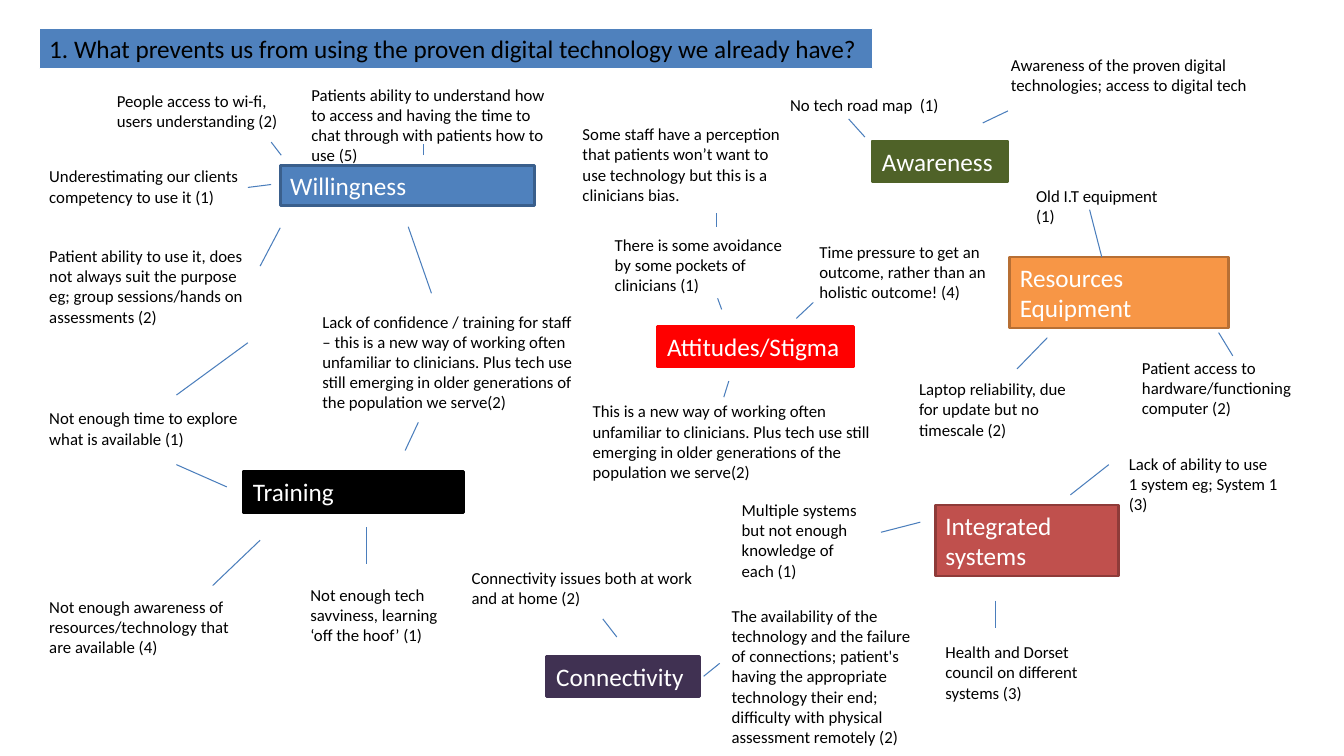
from lxml import etree
from pptx import Presentation
from pptx.dml.color import RGBColor
from pptx.enum.shapes import MSO_CONNECTOR, MSO_SHAPE
from pptx.enum.text import MSO_ANCHOR, MSO_AUTO_SIZE, PP_ALIGN
from pptx.oxml.ns import qn
from pptx.util import Pt

RECTANGLE = MSO_SHAPE.RECTANGLE
STRAIGHT = MSO_CONNECTOR.STRAIGHT
TOP = MSO_ANCHOR.TOP
LEFT = PP_ALIGN.LEFT
NO_AUTOFIT = MSO_AUTO_SIZE.NONE

THEME = {
    "font": "Calibri", "heading_size": 18, "note_size": 12,
    "dark": "000000", "light": "FFFFFF",
    "question": ("4F81BD", "FFFFFF"),
    "link": "4B7EBC", "link_width": 0.75,
    "question_border": 0.75, "topic_border": 2,
    # Fill and border of each topic
    "Willingness": ("4F81BD", "3A5F8C"),
    "Training": ("000000", "000000"),
    "Attitudes/Stigma": ("FF0000", "FF0000"),
    "Awareness": ("4F6228", "4F6228"),
    "Resources Equipment": ("F79646", "B76F34"),
    "Integrated  systems": ("C0504D", "8E3B39"),
    "Connectivity": ("403152", "403152"),
}

# Content: all places are in points
QUESTION = ("1. What prevents us from using the proven digital technology we already have?",
            (28.1, 20.2, 595.4))

# Topic: name, (left, top, width), lines of text
# Notes: text, (left, top, width), lines of room
# Links: start x, start y, end x, end y
TOPICS = [
    {"topic": ("Willingness", (200.2, 118.1, 181.4), 1),
     "notes": [
         ("People access to wi-fi, users understanding (2)", (76.3, 61.2, 135.4), 2),
         ("Patients ability to understand how to access and having the time to chat "
          "through with patients how to use (5)", (215.3, 56.9, 185.8), 4),
         ("Underestimating our clients competency to use it (1)", (28.1, 115.2, 202.3), 2),
         ("Patient ability to use it, does not always suit the purpose eg; group "
          "sessions/hands on assessments (2)", (28.1, 172.1, 157.7), 4),
         ("Lack of confidence / training for staff – this is a new way of working often "
          "unfamiliar to clinicians. Plus tech use still emerging in older generations "
          "of the population we serve(2)", (223.2, 218.9, 198), 5)],
     "links": [(200.9, 110.9, 193.7, 101.5), (302.4, 110.9, 302.4, 103),
               (177.1, 133.9, 193.7, 131.8), (185.8, 190.1, 200.2, 162.7),
               (291.6, 162, 308.2, 209.5)]},
    {"topic": ("Training", (173.5, 337, 157.7), 1),
     "notes": [
         ("Not enough time to explore what is available (1)", (28.1, 288, 157.7), 2),
         ("Not enough awareness of resources/technology that are available (4)",
          (28.1, 422.6, 157.7), 3),
         ("Not enough tech savviness, learning ‘off the hoof’ (1)", (214.6, 414, 118.1), 3)],
     "links": [(298.8, 301.7, 289.4, 321.8), (126, 331.9, 162, 347.8),
               (126, 282.2, 177.1, 244.8), (151.9, 418.3, 185.8, 385.9),
               (262.1, 376.6, 262.1, 403.2)]},
    {"topic": ("Attitudes/Stigma", (469.4, 233.3, 140.4), 1),
     "notes": [
         ("Some staff have a perception that patients won’t want to use technology but "
          "this is a clinicians bias.", (409, 85, 160.6), 5),
         ("There is some avoidance by some pockets of clinicians (1)", (432, 164.2, 140.4), 4),
         ("Time pressure to get an outcome, rather than an holistic outcome! (4)",
          (578.2, 169.2, 139.7), 3),
         ("This is a new way of working often unfamiliar to clinicians. Plus tech use "
          "still emerging in older generations of the population we serve(2)",
          (416.2, 283, 217.4), 4)],
     "links": [(511.9, 162, 511.9, 151.9), (515.5, 221, 512.6, 213.1),
               (568.8, 227.5, 581, 216), (517, 283.7, 520.6, 272.2)]},
    {"topic": ("Awareness", (622.8, 100.8, 97.2), 1),
     "notes": [
         ("No tech road map  (1)", (557.3, 64.1, 144.7), 1),
         ("Awareness of the proven digital technologies; access to digital tech",
          (715, 35.3, 217.4), 2)],
     "links": [(617.8, 97.9, 606.2, 85), (702, 87.8, 720, 79.2)]},
    {"topic": ("Resources Equipment", (721.4, 183.6, 156.2), 2),
     "notes": [
         ("Old I.T equipment (1)", (733, 128.9, 108.7), 2),
         ("Laptop reliability, due for update but no timescale (2)", (649.4, 267.1, 131), 3),
         ("Patient access to hardware/functioning computer (2)", (808.6, 252, 123.8), 3)],
     "links": [(778.3, 149.8, 787, 183.6), (748.1, 241.2, 726.5, 263.5),
               (870.5, 237.6, 880.6, 254.2)]},
    {"topic": ("Integrated  systems", (668.2, 360.7, 131), 2),
     "notes": [
         ("Lack of ability to use 1 system eg; System 1 (3)", (799.2, 320.4, 121.7), 3),
         ("Multiple systems but not enough knowledge of each (1)", (522.7, 353.5, 105.8), 4),
         ("Health and Dorset council on different systems (3)", (668.2, 455, 131), 3)],
     "links": [(792, 331.9, 764.6, 353.5), (629.3, 380.2, 657.4, 373),
               (711.4, 429.1, 711.4, 448.6)]},
    {"topic": ("Connectivity", (390.2, 468.7, 109.4), 1),
     "notes": [
         ("Connectivity issues both at work and at home (2)", (329.8, 401.8, 177.8), 2),
         ("The availability of the technology and the failure of connections; patient's "
          "having the appropriate technology their end; difficulty with physical "
          "assessment remotely (2)", (515.5, 429.1, 142.6), 7)],
     "links": [(430.6, 442.1, 440.6, 455), (502.6, 483.1, 514.1, 473.8)]},
]


def rgb(name):
    return RGBColor.from_string(name)


def frame(place, lines, size):
    """Left, top, width and the height that holds the lines of text."""
    return [Pt(v) for v in (*place, 7.2 + lines * size * 1.21)]


def write(holder, text, size, color):
    body = holder.text_frame
    body.text = text
    body.word_wrap = True
    body.auto_size = NO_AUTOFIT
    body.vertical_anchor = TOP
    paragraph = body.paragraphs[0]
    paragraph.alignment = LEFT
    font = paragraph.runs[0].font
    font.name = THEME["font"]
    font.size = Pt(size)
    font.color.rgb = rgb(color)


def add_heading(slide, text, place, lines, colors, border, text_color):
    size = THEME["heading_size"]
    heading = slide.shapes.add_shape(RECTANGLE, *frame(place, lines, size))
    heading.shadow.inherit = False
    heading.fill.solid()
    heading.fill.fore_color.rgb = rgb(colors[0])
    heading.line.color.rgb = rgb(colors[1])
    heading.line.width = Pt(border)
    write(heading, text, size, text_color)


def add_note(slide, text, place, lines):
    size = THEME["note_size"]
    note = slide.shapes.add_textbox(*frame(place, lines, size))
    write(note, text, size, THEME["dark"])


def add_link(slide, ends):
    link = slide.shapes.add_connector(STRAIGHT, *[Pt(v) for v in ends])
    link.line.color.rgb = rgb(THEME["link"])
    link.line.width = Pt(THEME["link_width"])
    etree.SubElement(link._element.spPr, qn("a:effectLst"))


def main():
    deck = Presentation()
    deck.slide_width, deck.slide_height = Pt(960), Pt(540)
    slide = deck.slides.add_slide(deck.slide_layouts[6])

    # Question across the top
    question, place = QUESTION
    add_heading(slide, question, place, 1, THEME["question"],
                THEME["question_border"], THEME["dark"])

    # Each topic with its notes and links
    for group in TOPICS:
        name, place, lines = group["topic"]
        add_heading(slide, name, place, lines, THEME[name],
                    THEME["topic_border"], THEME["light"])
        for note in group["notes"]:
            add_note(slide, *note)
        for ends in group["links"]:
            add_link(slide, ends)

    deck.save("out.pptx")


if __name__ == "__main__":
    main()
